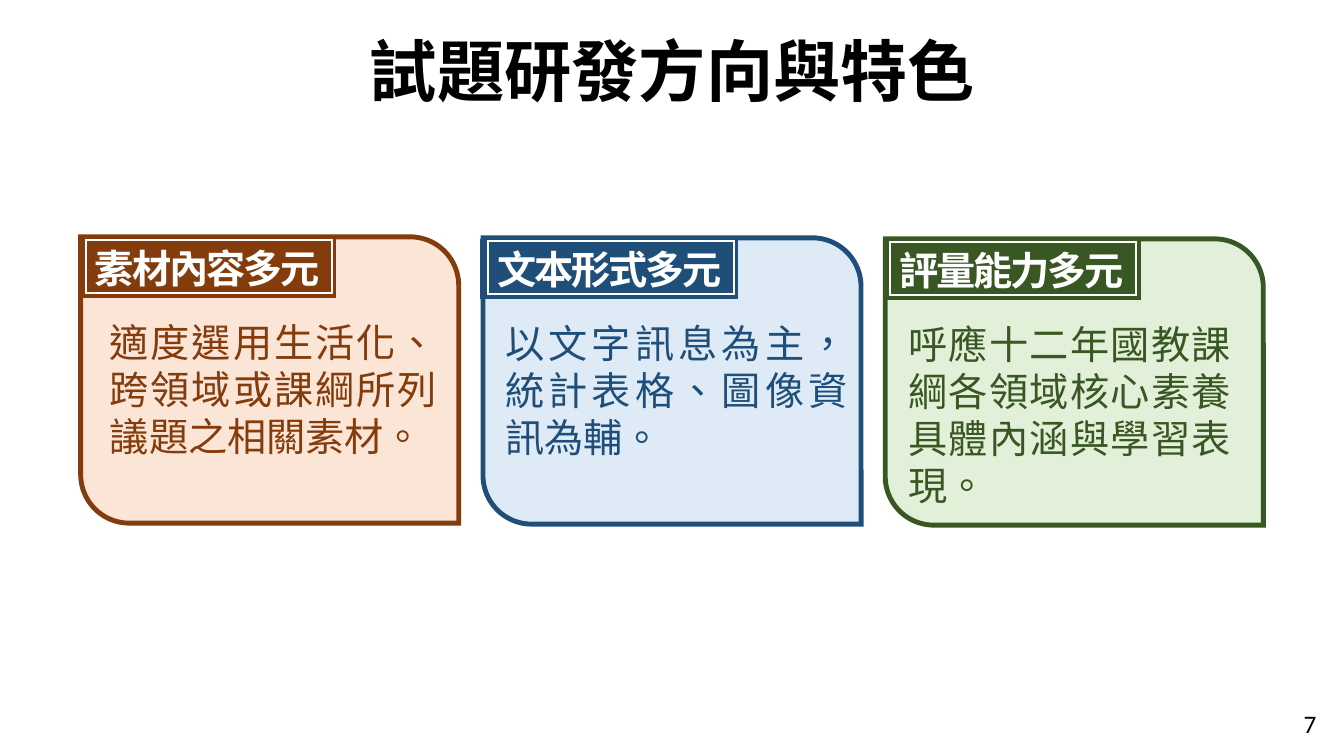
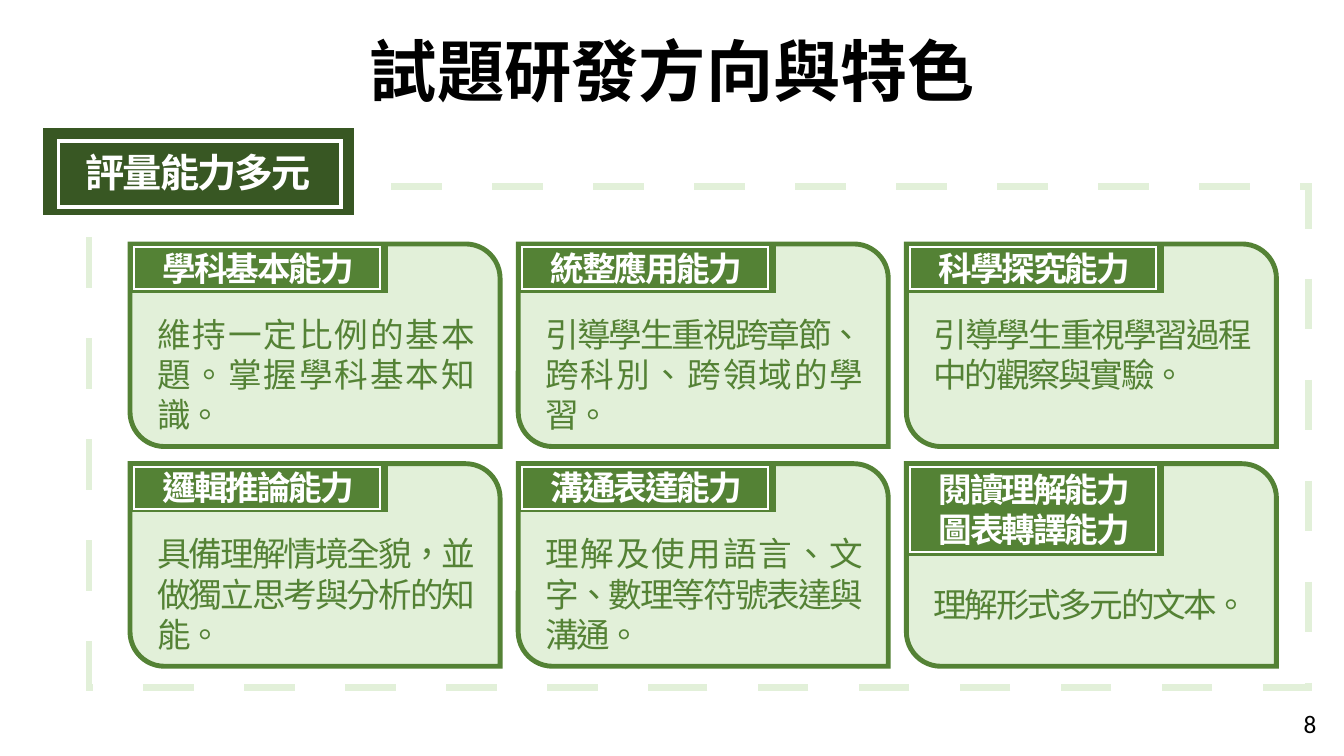
"""Build two slides on the direction and features of test item development."""
from dataclasses import dataclass
from typing import NamedTuple

from lxml.etree import SubElement
from pptx import Presentation
from pptx.dml.color import RGBColor
from pptx.enum.shapes import MSO_SHAPE
from pptx.enum.text import MSO_ANCHOR, PP_ALIGN
from pptx.oxml.ns import qn
from pptx.util import Inches, Pt


@dataclass(frozen=True)
class Theme:
    font: str = "Noto Sans CJK SC"
    serif: str = "Times New Roman"
    digits: str = "Calibri"
    black: str = "000000"
    white: str = "FFFFFF"
    brown: str = "843C0C"
    peach: str = "FBE5D6"
    navy: str = "1F4E79"
    sky: str = "DEEBF7"
    forest: str = "385723"
    green: str = "548235"
    mint: str = "E2F0D9"
    title_size: int = 48
    large: int = 28
    medium: int = 24
    number_size: int = 18


class Grid(NamedTuple):
    left: float
    top: float
    col: float
    row: float
    step: float
    width: float
    height: float
    tab: tuple
    frame: tuple
    body: float
    size: int
    spacing: int


class Card(NamedTuple):
    heading: list
    body: list
    dark: str
    light: str
    indent: float = 0.27
    measure: float = 3.13


T = Theme()
WIDTH, HEIGHT, COLUMNS = 13.33, 7.5, 3
TITLE = "試題研發方向與特色"
ABILITY = "評量能力多元"

THEMES_GRID = Grid(0.8, 2.35, 3.99, 0, 0.01, 3.75, 2.84, (-0.01, 0.03, 2.53, 0.56),
                   (0.05, 0.03, 2.44, 0.53), 0.81, T.large, 0)
SKILLS_GRID = Grid(1.29, 2.42, 3.85, 2.18, 0, 3.67, 2.01, (0, 0, 2.54, 0.47),
                   (0.04, 0.03, 2.44, 0.42), 0.69, T.medium, -170)

THEMES = [
    Card(["素材內容多元"], [("適度選用生活化、跨領域或課綱所列議題之相關素材。", T.font)],
         T.brown, T.peach, 0.29, 3.24),
    Card(["文本形式多元"], [("以文字訊息為主，統計表格、圖像資訊為輔。", T.font)],
         T.navy, T.sky, 0.22, 3.4),
    Card([ABILITY], [("呼應", T.font), ("十二", T.serif),
                     ("年國教課綱各領域核心素養具體內涵與學習表現。", T.font)],
         T.forest, T.mint, 0.23, 3.2),
]
SKILLS = [Card(heading, [(body, T.font)], T.green, T.mint) for heading, body in [
    (["學科基本能力"], "維持一定比例的基本題。掌握學科基本知識。"),
    (["統整應用能力"], "引導學生重視跨章節、跨科別、跨領域的學習。"),
    (["科學探究能力"], "引導學生重視學習過程中的觀察與實驗。"),
    (["邏輯推論能力"], "具備理解情境全貌，並做獨立思考與分析的知能。"),
    (["溝通表達能力"], "理解及使用語言、文字、數理等符號表達與溝通。"),
    (["閱讀理解能力", "圖表轉譯能力"], "理解形式多元的文本。"),
]]


def add_box(s, kind, at, fill, line, weight):
    sp = s.shapes.add_shape(kind, *map(Inches, at))
    sp.shadow.inherit = False
    if fill:
        sp.fill.solid()
        sp.fill.fore_color.rgb = RGBColor.from_string(fill)
    else:
        sp.fill.background()
    sp.line.color.rgb = RGBColor.from_string(line)
    sp.line.width = Pt(weight)
    SubElement(sp.line._get_or_add_ln(), qn("a:miter"), lim="800000")
    return sp


def write(sp, paragraphs, size, color, align, anchor, bold=False, spacing=0):
    tf = sp.text_frame
    tf.word_wrap = True
    tf.vertical_anchor = anchor
    tf.margin_left = tf.margin_right = tf.margin_top = tf.margin_bottom = 0
    for i, runs in enumerate(paragraphs):
        p = tf.add_paragraph() if i else tf.paragraphs[0]
        p.alignment = align
        p._p.get_or_add_pPr().set("hangingPunct", "0")
        for text, font in runs:
            r = p.add_run()
            r.text = text
            r.font.name = font
            r.font.size = Pt(size)
            r.font.bold = bold
            r.font.color.rgb = RGBColor.from_string(color)
            rPr = r._r.get_or_add_rPr()
            rPr.set("lang", "zh-TW")
            rPr.set("spc", str(spacing))
            SubElement(rPr, qn("a:ea"), typeface=T.font)
    return tf


prs = Presentation()
prs.slide_width, prs.slide_height = Inches(WIDTH), Inches(HEIGHT)

for number, grid, cards in [(7, THEMES_GRID, THEMES), (8, SKILLS_GRID, SKILLS)]:
    s = prs.slides.add_slide(prs.slide_layouts[6])

    sp = s.shapes.add_textbox(*map(Inches, (0.92, 0.02, 11.5, 1.45)))
    tf = write(sp, [[(TITLE, T.font)]], T.title_size, T.black,
               PP_ALIGN.CENTER, MSO_ANCHOR.MIDDLE, bold=True)
    tf.paragraphs[0].line_spacing = 0.9
    sp = s.shapes.add_textbox(*map(Inches, (12.93, 6.98, 0.4, 0.4)))
    write(sp, [[(str(number), T.digits)]], T.number_size, T.black,
          PP_ALIGN.LEFT, MSO_ANCHOR.MIDDLE)

    if cards is SKILLS:
        sp = add_box(s, MSO_SHAPE.RECTANGLE, (0.88, 1.85, 12.1, 4.97), None, T.mint, 4.5)
        dash = SubElement(sp.line._get_or_add_ln(), qn("a:custDash"))
        SubElement(dash, qn("a:ds"), d="800000", sp="800000")
        dash.getprevious().addprevious(dash)
        sp = add_box(s, MSO_SHAPE.RECTANGLE, (0.43, 1.28, 3.07, 0.85), T.forest, T.forest, 1)
        write(sp, [[(ABILITY, T.font)]], T.large, T.white,
              PP_ALIGN.CENTER, MSO_ANCHOR.MIDDLE, bold=True, spacing=-150)
        add_box(s, MSO_SHAPE.RECTANGLE, (0.58, 1.4, 2.8, 0.65), None, T.white, 2.75)

    for i, card in enumerate(cards):
        row, col = divmod(i, COLUMNS)
        x = grid.left + col * grid.col
        y = grid.top + row * grid.row + col * grid.step
        extra = 0.43 * (len(card.heading) - 1)

        sp = add_box(s, MSO_SHAPE.ROUND_2_DIAG_RECTANGLE,
                     (x, y, grid.width, grid.height), card.light, card.dark, 3.5)
        sp.adjustments[0], sp.adjustments[1] = 0, 0.17

        dx, dy, w, h = grid.tab
        sp = add_box(s, MSO_SHAPE.RECTANGLE, (x + dx, y + dy, w, h + extra),
                     card.dark, card.dark, 2)
        write(sp, [[(line, T.font)] for line in card.heading], grid.size, T.white,
              PP_ALIGN.CENTER, MSO_ANCHOR.MIDDLE, bold=True, spacing=-150)
        dx, dy, w, h = grid.frame
        add_box(s, MSO_SHAPE.RECTANGLE, (x + dx, y + dy, w, h + extra), None, T.white, 1.5)

        top = grid.body + 1.16 * extra
        sp = s.shapes.add_textbox(*map(Inches, (x + card.indent, y + top, card.measure,
                                                grid.height - top)))
        write(sp, [card.body], grid.size, card.dark, PP_ALIGN.JUSTIFY, MSO_ANCHOR.TOP,
              spacing=grid.spacing)

prs.save("out.pptx")
